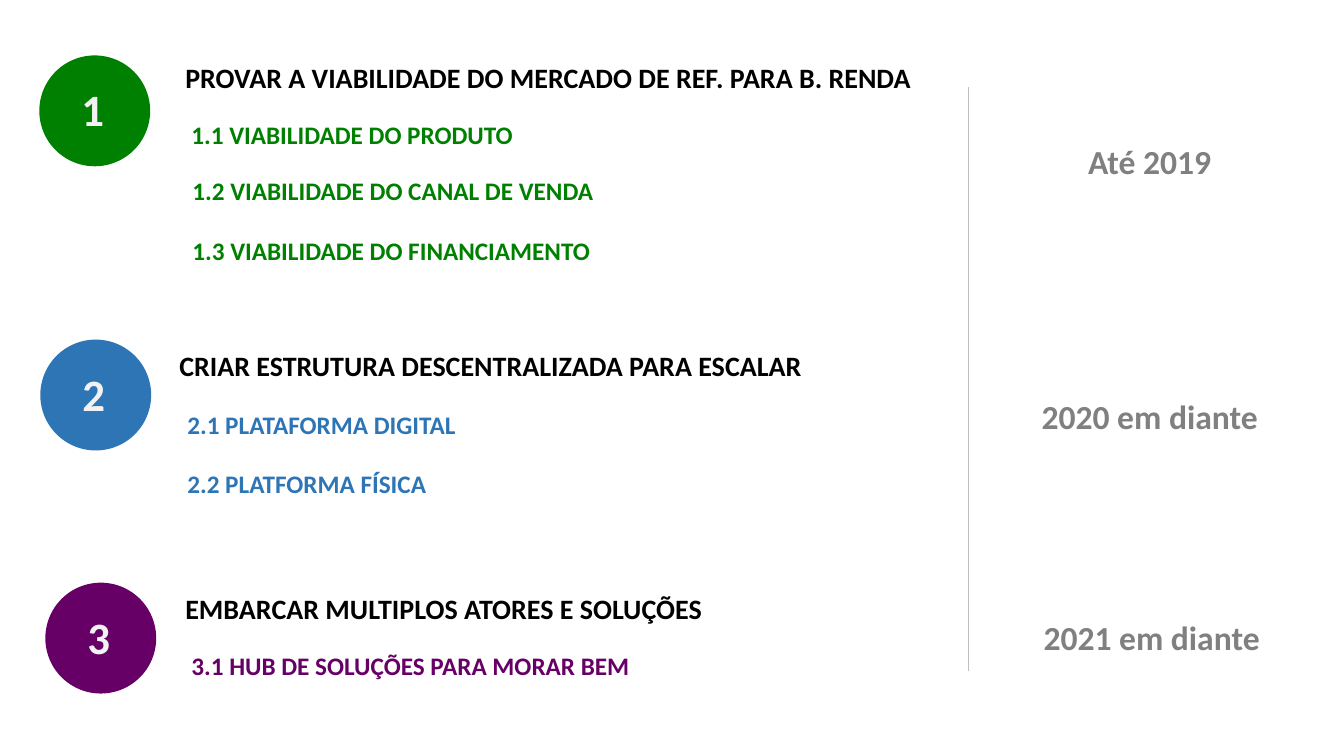
import pptx
import pptx.util
import pptx.dml.color
import pptx.enum.shapes
import pptx.enum.text
import lxml.etree

Pt = pptx.util.Pt
ALIGN = pptx.enum.text.PP_ALIGN
COLORS = {
    "green": "008000",
    "blue": "2E75B6",
    "purple": "660066",
    "heading": "000000",
    "number": "F2F2F2",
    "period": "808080",
    "divider": "BFBFBF",
}
CIRCLE = 79.2
STAGES = [
    ("1", "green", (28.1, 39.6), (125.3, 39.6),
     "PROVAR A VIABILIDADE DO MERCADO DE REF. PARA B. RENDA",
     [("1.1 VIABILIDADE DO PRODUTO", 4.3, 41.8),
      ("1.2 VIABILIDADE DO CANAL DE VENDA", 5, 82.1),
      ("1.3 VIABILIDADE DO FINANCIAMENTO", 5, 124.6)]),
    ("2", "blue", (28.8, 242.6), (121, 245.5),
     "CRIAR ESTRUTURA DESCENTRALIZADA PARA ESCALAR",
     [("2.1 PLATAFORMA DIGITAL", 5.7, 43.2),
      ("2.2 PLATFORMA FÍSICA", 5.7, 85.7)]),
    ("3", "purple", (32.4, 416.2), (125.3, 419),
     "EMBARCAR MULTIPLOS ATORES E SOLUÇÕES",
     [("3.1 HUB DE SOLUÇÕES PARA MORAR BEM", 4.3, 41.8)]),
]
PERIODS = [
    ("Até 2019", 707.8, 97.2),
    ("2020 em diante", 707.8, 279.4),
    ("2021 em diante", 709.2, 437),
]


def rgb(name):
    """Return the named colour."""
    return pptx.dml.color.RGBColor.from_string(COLORS[name])


def add_text(s, text, x, y, w, h, size, color, align=ALIGN.LEFT):
    """Add one bold line of text in the given box."""
    tf = s.shapes.add_textbox(Pt(x), Pt(y), Pt(w), Pt(h)).text_frame
    tf.word_wrap = True
    tf.auto_size = pptx.enum.text.MSO_AUTO_SIZE.SHAPE_TO_FIT_TEXT
    p = tf.paragraphs[0]
    p.alignment = align
    r = p.add_run()
    r.text = text
    r.font.name = "Calibri"
    r.font.size = Pt(size)
    r.font.bold = True
    r.font.color.rgb = rgb(color)


def add_badge(s, number, color, x, y):
    """Add a numbered circle with its top left corner at x, y."""
    sp = s.shapes.add_shape(pptx.enum.shapes.MSO_SHAPE.OVAL,
                            Pt(x), Pt(y), Pt(CIRCLE), Pt(CIRCLE))
    sp.shadow.inherit = False
    sp.fill.solid()
    sp.fill.fore_color.rgb = rgb(color)
    sp.line.fill.background()
    add_text(s, number, x + 23, y + 15.5, 42, 46, 32, "number")


def add_stage(s, number, color, badge, corner, heading, items):
    """Add a badge, and a heading with its items placed below the corner."""
    add_badge(s, number, color, *badge)
    x, y = corner
    add_text(s, heading, x, y, 643.7, 31.5, 20, "heading")
    for text, dx, dy in items:
        add_text(s, text, x + dx, y + dy, 569.5, 29, 18, color)


def add_divider(s, x, top, bottom):
    """Add the vertical line between stages and periods."""
    line = s.shapes.add_connector(pptx.enum.shapes.MSO_CONNECTOR.STRAIGHT,
                                  Pt(x), Pt(bottom), Pt(x), Pt(top))
    line.line.color.rgb = rgb("divider")
    line.line.width = Pt(0.75)
    spPr = line._element.spPr
    lxml.etree.SubElement(spPr, pptx.oxml.ns.qn("a:effectLst"))


def main():
    """Build and save the roadmap slide."""
    prs = pptx.Presentation()
    prs.slide_width, prs.slide_height = Pt(960), Pt(540)
    s = prs.slides.add_slide(prs.slide_layouts[6])
    for stage in STAGES:
        add_stage(s, *stage)
    add_divider(s, 691.9, 61.9, 479.5)
    for text, x, y in PERIODS:
        add_text(s, text, x, y, 226.8, 36, 24, "period", ALIGN.CENTER)
    prs.save("out.pptx")


if __name__ == "__main__":
    main()
